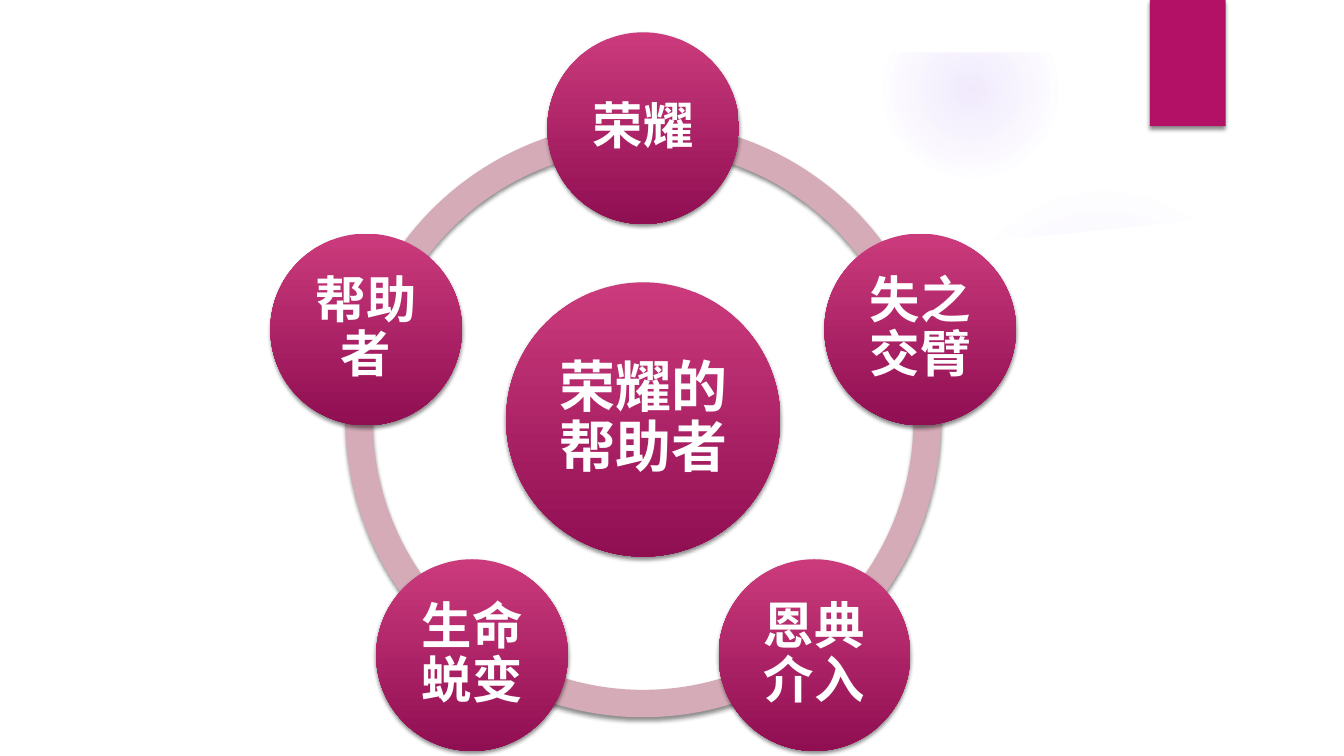
import math
from dataclasses import dataclass

from lxml import etree
from pptx import Presentation
from pptx import util as u
from pptx.dml.color import RGBColor
from pptx.enum import shapes, text
from pptx.oxml import ns

Stop = tuple[int, str, int]  # position %, colour, opacity %
Point = tuple[float, float]  # cm


@dataclass(frozen=True)
class Theme:
    font: str = "Quicksand"
    white: str = "FFFFFF"
    accent: str = "B31166"
    ring: str = "D6ABB8"
    glow: str = "9B6BF2"
    disc_top: str = "CB3B7C"
    disc_bottom: str = "900E52"
    hub_size: int = 40
    node_size: int = 36


@dataclass(frozen=True)
class Disc:
    label: str
    x: float
    y: float
    diameter: float
    size: int
    inset: float


@dataclass(frozen=True)
class Glow:
    x: float
    y: float
    diameter: float
    stops: tuple[Stop, ...]


@dataclass(frozen=True)
class Panel:
    contours: tuple[tuple[Point, ...], ...]
    opacity: int = 100


THEME = Theme()
WIDTH, HEIGHT = 33.87, 19.05
CENTRE_X, CENTRE_Y = 16.21, 10.57
RING_DIAMETER, RING_THICKNESS = 15.01, 0.046
ORBIT, HUB_DIAMETER, NODE_DIAMETER = 7.34, 6.91, 4.83
NODES = ("荣耀", "失之交臂", "恩典介入", "生命蜕变", "帮助者")
STEP = 360 / len(NODES)

GLOWS = (
    Glow(23.9, 4.65, 7.82, ((0, THEME.glow, 7), (36, THEME.glow, 6), (69, THEME.glow, 0))),
    Glow(22.23, 0.03, 4.45, ((0, THEME.glow, 14), (36, THEME.glow, 7), (73, THEME.glow, 0))),
)
PANELS = (
    # Translucent curl above the paper
    Panel((((23.72, 6.35), (28, 6.05), (32.74, 5.44), (32.59, 4.22), (31.12, 4.7),
            (29.64, 5.08), (28.17, 5.44), (26.75, 5.72), (25.37, 5.94), (23.62, 6.17)),), 20),
    # Paper with a sagging top edge
    Panel((((1.27, 5.18), (1.27, 17.78), (32.61, 17.78), (32.61, 5.18), (29.77, 5.59),
            (26.92, 5.89), (24.1, 6.12), (21.34, 6.25), (17.98, 6.3), (14.81, 6.25),
            (11.28, 6.12), (7.19, 5.84), (2.87, 5.38)),)),
    # Frame around the page
    Panel((((0, 0), (0, HEIGHT), (WIDTH, HEIGHT), (WIDTH, 0)),
           ((32.54, 17.73), (1.32, 17.73), (1.32, 1.32), (32.54, 1.32)))),
)


def add_child(parent, tag: str, **values):
    return etree.SubElement(parent, ns.qn(tag), {key: str(value) for key, value in values.items()})


def set_attributes(target, values: dict) -> None:
    for name, value in values.items():
        setattr(target, name, value)


def add_colour(parent, colour: str, opacity: int) -> None:
    add_child(add_child(parent, "a:srgbClr", val=colour), "a:alpha", val=opacity * 1000)


def solid(shape, colour: str) -> None:
    shape.fill.solid()
    shape.fill.fore_color.rgb = RGBColor.from_string(colour)


def gradient(shape, stops: tuple[Stop, ...], radial: bool = False) -> None:
    shape.fill.background()
    empty = shape._element.spPr.find(ns.qn("a:noFill"))
    fill = etree.Element(ns.qn("a:gradFill"), rotWithShape="1")
    stop_list = add_child(fill, "a:gsLst")
    for position, colour, opacity in stops:
        add_colour(add_child(stop_list, "a:gs", pos=position * 1000), colour, opacity)
    if radial:
        centre = add_child(fill, "a:path", path="circle")
        add_child(centre, "a:fillToRect", l=50000, t=50000, r=50000, b=50000)
    else:
        add_child(fill, "a:lin", ang=90 * 60000, scaled=0)
    empty.getparent().replace(empty, fill)


def finish(shape, shadow: bool = False) -> None:
    shape.line.fill.background()
    shape.shadow.inherit = False
    if shadow:
        effects = shape._element.spPr.find(ns.qn("a:effectLst"))
        cast = add_child(effects, "a:outerShdw", blurRad=u.Pt(3), dist=u.Pt(2),
                         dir=90 * 60000, rotWithShape=0)
        add_colour(cast, "000000", 45)


def add_preset(page, kind, x: float, y: float, width: float, height: float):
    return page.shapes.add_shape(kind, u.Cm(x), u.Cm(y), u.Cm(width), u.Cm(height))


def draw_glow(page, glow: Glow) -> None:
    shape = add_preset(page, shapes.MSO_SHAPE.OVAL, glow.x, glow.y, glow.diameter, glow.diameter)
    gradient(shape, glow.stops, radial=True)
    finish(shape)


def draw_panel(page, panel: Panel) -> None:
    contours = [[(u.Cm(x), u.Cm(y)) for x, y in contour] for contour in panel.contours]
    builder = page.shapes.build_freeform(*contours[0][0])
    for index, contour in enumerate(contours):
        if index:
            builder.move_to(*contour[0])
        builder.add_line_segments(contour[1:], close=True)
    shape = builder.convert_to_shape()
    solid(shape, THEME.white)
    if panel.opacity < 100:
        colour = shape._element.spPr.find(ns.qn("a:solidFill"))[0]
        add_child(colour, "a:alpha", val=panel.opacity * 1000)
    finish(shape)


def draw_arc(page, start: float) -> None:
    shape = add_preset(page, shapes.MSO_SHAPE.BLOCK_ARC, CENTRE_X - RING_DIAMETER / 2,
                       CENTRE_Y - RING_DIAMETER / 2, RING_DIAMETER, RING_DIAMETER)
    # Angles are stored as 60000ths of a degree over 100000
    angles = [angle % 360 * 0.6 for angle in (start, start + STEP)]
    for index, value in enumerate((*angles, RING_THICKNESS)):
        shape.adjustments[index] = value
    solid(shape, THEME.ring)
    finish(shape, shadow=True)


def draw_disc(page, disc: Disc) -> None:
    shape = add_preset(page, shapes.MSO_SHAPE.OVAL, disc.x - disc.diameter / 2,
                       disc.y - disc.diameter / 2, disc.diameter, disc.diameter)
    gradient(shape, ((0, THEME.disc_top, 100), (100, THEME.disc_bottom, 100)))
    finish(shape, shadow=True)
    box = shape.text_frame
    margins = {f"margin_{side}": u.Cm(disc.inset) for side in ("left", "top", "right", "bottom")}
    set_attributes(box, {"word_wrap": True, "vertical_anchor": text.MSO_ANCHOR.MIDDLE, **margins})
    para = box.paragraphs[0]
    set_attributes(para, {"alignment": text.PP_ALIGN.CENTER, "line_spacing": 0.9})
    add_child(add_child(para._p.pPr, "a:spcAft"), "a:spcPct", val=35000)
    span = para.add_run()
    span.text = disc.label
    set_attributes(span.font, {"name": THEME.font, "size": u.Pt(disc.size), "bold": True})
    span.font.color.rgb = RGBColor.from_string(THEME.white)


def main() -> None:
    deck = Presentation()
    set_attributes(deck, {"slide_width": u.Cm(WIDTH), "slide_height": u.Cm(HEIGHT)})
    page = deck.slides.add_slide(deck.slide_layouts[6])

    # Backdrop
    for glow in GLOWS:
        draw_glow(page, glow)
    for panel in PANELS:
        draw_panel(page, panel)
    ribbon = add_preset(page, shapes.MSO_SHAPE.RECTANGLE, 28.98, 0, 1.91, 3.18)
    solid(ribbon, THEME.accent)
    finish(ribbon, shadow=True)

    # Ring, drawn anticlockwise from the upper left
    for index in range(len(NODES)):
        draw_arc(page, 198 - index * STEP)

    # Hub, then the nodes clockwise from the top
    draw_disc(page, Disc("荣耀的帮助者", CENTRE_X, CENTRE_Y, HUB_DIAMETER, THEME.hub_size, 0.15))
    for index, label in enumerate(NODES):
        angle = math.radians(index * STEP - 90)
        draw_disc(page, Disc(label, CENTRE_X + ORBIT * math.cos(angle),
                             CENTRE_Y + ORBIT * math.sin(angle),
                             NODE_DIAMETER, THEME.node_size, 0.13))

    deck.save("out.pptx")


if __name__ == "__main__":
    main()
